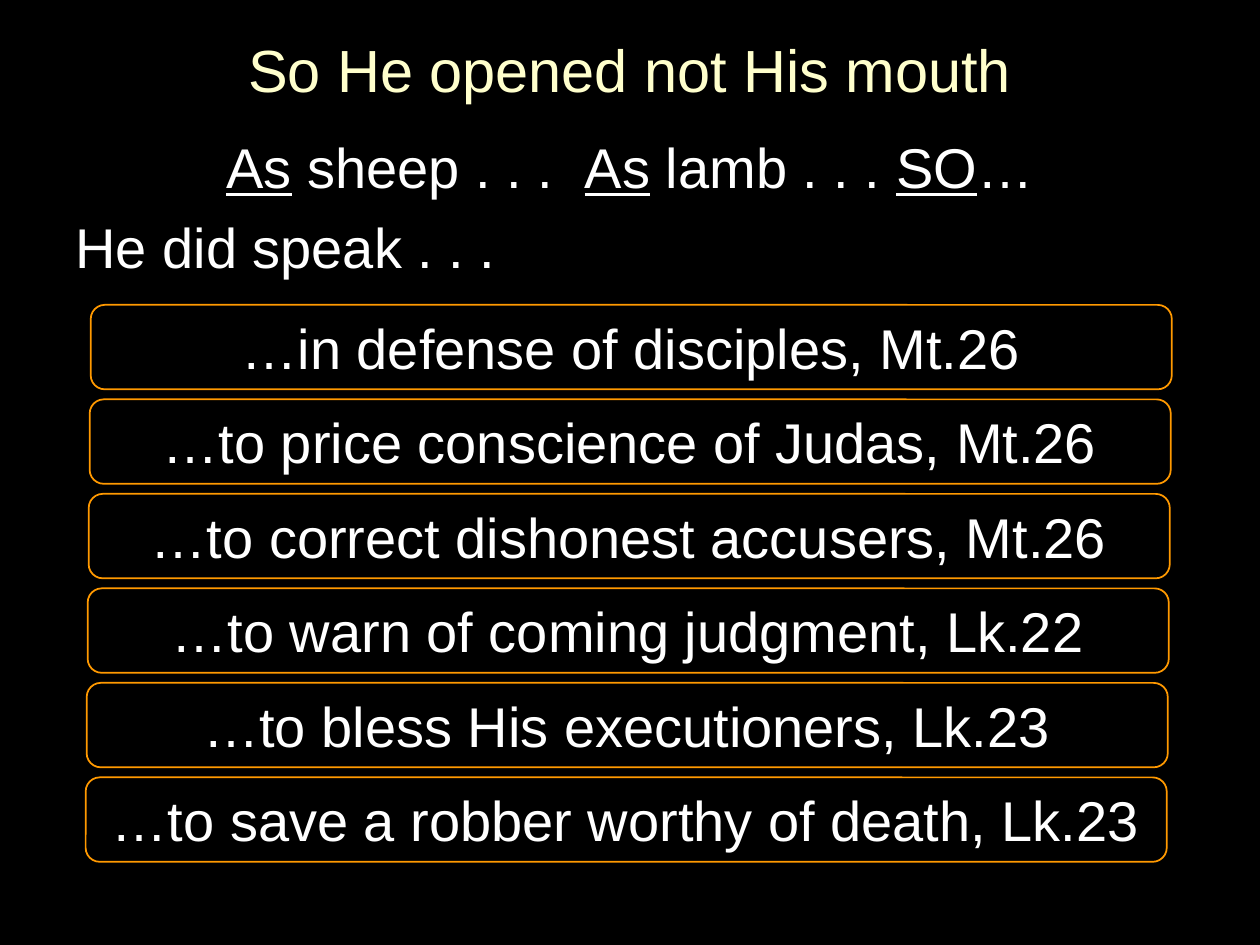
from pptx import Presentation
from pptx.dml.color import RGBColor
from pptx.enum import shapes, text
from pptx.util import Inches, Pt

BLACK = RGBColor(0x00, 0x00, 0x00)
WHITE = RGBColor(0xFF, 0xFF, 0xFF)
CREAM = RGBColor(0xFF, 0xFF, 0xCC)
ORANGE = RGBColor(0xFF, 0x99, 0x00)
MID, TOP = text.MSO_ANCHOR.MIDDLE, text.MSO_ANCHOR.TOP
CENTER, LEFT = text.PP_ALIGN.CENTER, text.PP_ALIGN.LEFT

SAYINGS = [
    "…in defense of disciples, Mt.26",
    "…to price conscience of Judas, Mt.26",
    "…to correct dishonest accusers, Mt.26",
    "…to warn of coming judgment, Lk.22",
    "…to bless His executioners, Lk.23",
    "…to save a robber worthy of death, Lk.23",
]


def write(para, runs, size=32, color=WHITE, align=CENTER, before=0):
    """Fill a paragraph with (words, underlined) runs, or one plain string."""
    para.alignment = align
    para.space_before = Pt(before)
    if isinstance(runs, str):
        runs = [(runs, False)]
    for words, under in runs:
        run = para.add_run()
        run.text = words
        font = run.font
        font.name, font.size, font.underline = "Arial", Pt(size), under
        font.color.rgb = color


def frame(shape, anchor):
    tf = shape.text_frame
    tf.word_wrap = True
    tf.vertical_anchor = anchor
    return tf


def title(slide, x, y, w, h):
    box = slide.shapes.add_textbox(Inches(x), Inches(y), Inches(w), Inches(h))
    write(frame(box, MID).paragraphs[0], "So He opened not His mouth",
          size=34, color=CREAM)


def intro(slide, x, y, w, h):
    box = slide.shapes.add_textbox(Inches(x), Inches(y), Inches(w), Inches(h))
    tf = frame(box, TOP)
    write(tf.paragraphs[0], [
        ("As", True), (" sheep . . .  ", False),
        ("As", True), (" lamb . . . ", False),
        ("SO", True), ("…", False)])
    write(tf.add_paragraph(), "He did speak . . .", align=LEFT, before=7.5)


def stack(slide, x, y, w, h, pitch=0.75, drift=0.008):
    """Stack the sayings; each box sits slightly left of the one above."""
    for i, words in enumerate(SAYINGS):
        box = slide.shapes.add_shape(
            shapes.MSO_SHAPE.ROUNDED_RECTANGLE,
            Inches(x - i * drift), Inches(y + i * pitch), Inches(w), Inches(h))
        box.shadow.inherit = False
        box.fill.solid()
        box.fill.fore_color.rgb = BLACK
        box.line.color.rgb = ORANGE
        box.line.width = Pt(1)
        write(frame(box, MID).paragraphs[0], words)


def main():
    prs = Presentation()
    prs.slide_width, prs.slide_height = Inches(10), Inches(7.5)
    slide = prs.slides.add_slide(prs.slide_layouts[6])
    slide.background.fill.solid()
    slide.background.fill.fore_color.rgb = BLACK

    # Heading, introduction, then the boxed sayings
    title(slide, 0.05, 0.17, 9.9, 0.75)
    intro(slide, 0.5, 1, 9, 5.67)
    stack(slide, 0.72, 2.42, 8.58, 0.67)

    prs.save("out.pptx")


if __name__ == "__main__":
    main()
